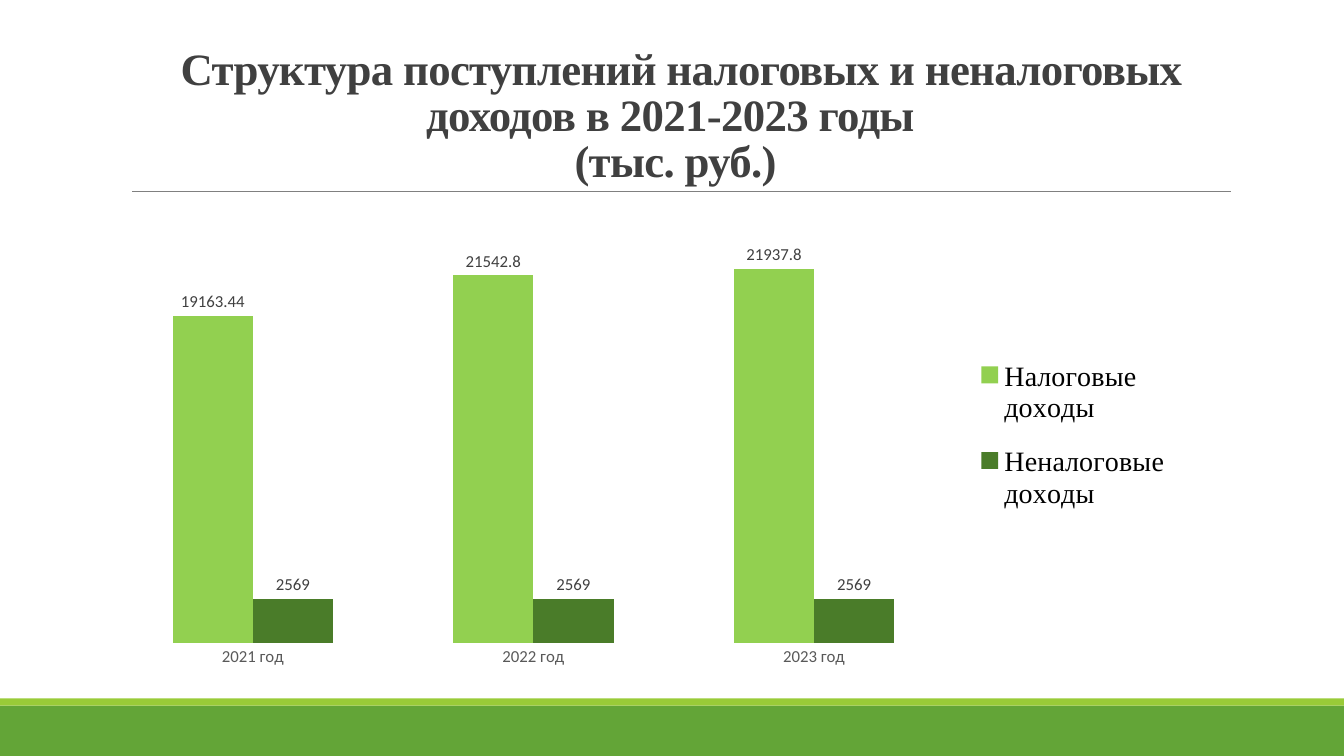
import pptx
import pptx.chart.data
import pptx.dml.color
import pptx.enum.chart
import pptx.enum.shapes
import pptx.enum.text
import pptx.oxml
import pptx.oxml.ns
import pptx.util
from dataclasses import dataclass


@dataclass(frozen=True)
class Theme:
    band: str = "63A537"
    stripe: str = "99CB38"
    rule: str = "808080"
    dark: str = "404040"
    axis: str = "595959"
    black: str = "000000"
    tax: str = "92D050"
    non_tax: str = "4A7C29"
    heading_font: str = "Times New Roman"
    body_font: str = "Calibri"
    title_size: int = 32
    legend_size: int = 20
    label_size: int = 12


THEME = Theme()
WIDTH, HEIGHT = 13.33, 7.5
TITLE = " Структура поступлений налоговых и неналоговых доходов в 2021-2023 годы \v(тыс. руб.)"
YEARS = ["2021 год", "2022 год", "2023 год", ""]  # the last slot stays free for the legend
SERIES = [
    ("Налоговые доходы", [19163.44, 21542.8, 21937.8, None], THEME.tax),
    ("Неналоговые доходы", [2569, 2569, 2569, None], THEME.non_tax),
]


def inches(box):
    return [pptx.util.Inches(length) for length in box]


def rgb(color):
    return pptx.dml.color.RGBColor.from_string(color)


def set_font(font, name, size, color):
    font.name = name
    font.size = pptx.util.Pt(size)
    font.color.rgb = rgb(color)


def add_band(slide, box, color):
    band = slide.shapes.add_shape(pptx.enum.shapes.MSO_SHAPE.RECTANGLE, *inches(box))
    band.shadow.inherit = False
    band.fill.solid()
    band.fill.fore_color.rgb = rgb(color)
    band.line.fill.background()


def add_footer(slide, box):
    """Draw a wide band with a thin stripe on top of it."""
    left, top, width, height = box
    stripe = 0.07
    add_band(slide, (left, top + stripe, width, height - stripe), THEME.band)
    add_band(slide, (left, top, width, stripe), THEME.stripe)


def add_heading(slide, box):
    """Fill the title placeholder and underline it along the bottom of the box."""
    left, top, width, height = box
    title = slide.shapes.title
    title.left, title.top, title.width, title.height = inches(box)
    frame = title.text_frame
    frame.word_wrap = True
    frame.auto_size = pptx.enum.text.MSO_AUTO_SIZE.NONE
    frame.vertical_anchor = pptx.enum.text.MSO_ANCHOR.BOTTOM
    frame.text = TITLE
    para = frame.paragraphs[0]
    para.alignment = pptx.enum.text.PP_ALIGN.CENTER
    para.line_spacing = 0.85
    para.space_before = pptx.util.Pt(0)
    set_font(para.font, THEME.heading_font, THEME.title_size, THEME.dark)
    para.font.bold = True
    for span in para.runs:
        span.font._element.set("spc", "-50")

    bottom = top + height
    ends = inches((left + 0.11, bottom, left + width + 0.01, bottom))
    rule = slide.shapes.add_connector(pptx.enum.shapes.MSO_CONNECTOR.STRAIGHT, *ends)
    rule.line.color.rgb = rgb(THEME.rule)
    rule.line.width = pptx.util.Pt(0.5)
    rule._element.spPr.append(pptx.oxml.parse_xml(
        f"<a:effectLst {pptx.oxml.ns.nsdecls('a')}/>"))


def manual_layout(area, inner=False):
    """Return a chart layout element for left, top, width, height as shares of the chart."""
    target = '<c:layoutTarget val="inner"/>' if inner else ""
    modes = '<c:xMode val="edge"/><c:yMode val="edge"/>'
    sizes = "".join(f'<c:{key} val="{share}"/>' for key, share in zip("xywh", area))
    return pptx.oxml.parse_xml(
        f"<c:layout {pptx.oxml.ns.nsdecls('c')}><c:manualLayout>"
        f"{target}{modes}{sizes}</c:manualLayout></c:layout>")


def format_axes(chart):
    years = chart.category_axis
    years.major_tick_mark = pptx.enum.chart.XL_TICK_MARK.NONE
    years.format.line.fill.background()
    set_font(years.tick_labels.font, THEME.body_font, THEME.label_size, THEME.axis)
    amounts = chart.value_axis
    amounts.visible = False
    amounts.has_major_gridlines = False
    amounts.minimum_scale, amounts.maximum_scale = 0, 25000


def format_legend(chart):
    chart.has_legend = True
    legend = chart.legend
    legend.position = pptx.enum.chart.XL_LEGEND_POSITION.BOTTOM
    legend.include_in_layout = True
    set_font(legend.font, THEME.heading_font, THEME.legend_size, THEME.black)
    layout = manual_layout((0.77, 0.27, 0.18, 0.41))
    for old in legend._element.findall(pptx.oxml.ns.qn("c:layout")):
        legend._element.remove(old)
    legend._element.find(pptx.oxml.ns.qn("c:legendPos")).addnext(layout)


def format_plot(chart):
    plot = chart.plots[0]
    plot.gap_width, plot.overlap = 150, 0
    plot.vary_by_categories = False
    for series, (_, _, color) in zip(plot.series, SERIES):
        series.format.fill.solid()
        series.format.fill.fore_color.rgb = rgb(color)
        labels = series.data_labels
        labels.show_value = True
        labels.position = pptx.enum.chart.XL_LABEL_POSITION.OUTSIDE_END
        set_font(labels.font, THEME.body_font, THEME.label_size, THEME.dark)
    area = chart._chartSpace.chart.plotArea
    for old in area.findall(pptx.oxml.ns.qn("c:layout")):
        area.remove(old)
    area.insert(0, manual_layout((0.036, 0.012, 0.963, 0.902), inner=True))


def add_revenue_chart(slide, box):
    revenue = pptx.chart.data.CategoryChartData()
    revenue.categories = YEARS
    for name, values, _ in SERIES:
        revenue.add_series(name, values)
    kind = pptx.enum.chart.XL_CHART_TYPE.COLUMN_CLUSTERED
    chart = slide.shapes.add_chart(kind, *inches(box), revenue).chart
    chart.has_title = False
    set_font(chart.font, THEME.body_font, 10, THEME.black)
    format_axes(chart)
    format_legend(chart)
    format_plot(chart)


def main():
    deck = pptx.Presentation()
    deck.slide_width, deck.slide_height = inches((WIDTH, HEIGHT))
    slide = deck.slides.add_slide(deck.slide_layouts.get_by_name("Title Only"))
    add_footer(slide, (0, HEIGHT - 0.57, WIDTH, 0.57))
    add_heading(slide, (1.2, 0.31, 11, 1.59))
    add_revenue_chart(slide, (0.7, 2.09, 11.56, 4.69))
    deck.save("out.pptx")


if __name__ == "__main__":
    main()
